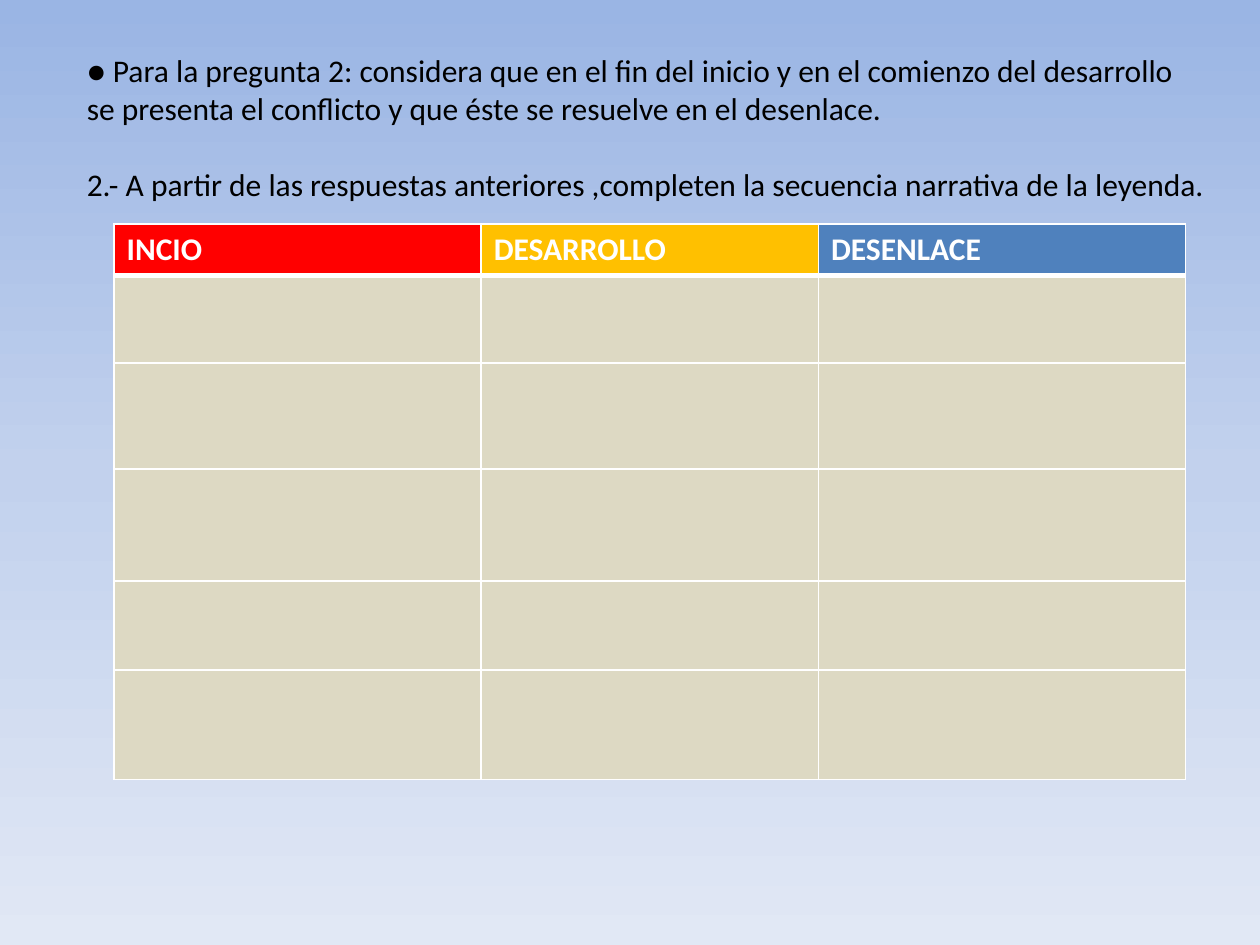
from copy import deepcopy
from dataclasses import dataclass

from lxml.etree import SubElement
from pptx import Presentation
from pptx.dml.color import RGBColor as RGB
from pptx.enum.text import MSO_AUTO_SIZE as AutoSize
from pptx.oxml.ns import qn
from pptx.util import Cm, Pt


@dataclass(frozen=True)
class Theme:
    font: str = "Calibri"
    size: int = 18
    text: str = "000000"
    light: str = "FFFFFF"
    body_fill: str = "DDD9C3"
    sky: tuple = ((0, "9AB5E4"), (0.5, "C2D1ED"), (1, "E1E8F5"))
    stages: tuple = (("INCIO", "FF0000"), ("DESARROLLO", "FFC000"), ("DESENLACE", "4F81BD"))


theme = Theme()


def style_font(paragraph, color, bold=False):
    paragraph.font.name = theme.font
    paragraph.font.size = Pt(theme.size)
    paragraph.font.bold = bold
    paragraph.font.color.rgb = RGB.from_string(color)


def add_border(cell, side, points):
    properties = cell._tc.get_or_add_tcPr()
    line = SubElement(properties, qn(f"a:ln{side}"), w=str(Pt(points)))
    solid = SubElement(line, qn("a:solidFill"))
    SubElement(solid, qn("a:srgbClr"), val=theme.light)


deck = Presentation()
deck.slide_width, deck.slide_height = Cm(25.4), Cm(19.05)
slide = deck.slides.add_slide(deck.slide_layouts[6])

sky = slide.background.fill
sky.gradient()
sky.gradient_angle = 270
first_stop = next(slide.element.iter(qn("a:gs")))
first_stop.addnext(deepcopy(first_stop))
for stop, (position, color) in zip(sky.gradient_stops, theme.sky):
    stop.position = position
    stop.color.rgb = RGB.from_string(color)

instructions = slide.shapes.add_textbox(Cm(1.5), Cm(0.91), Cm(23.6), Cm(5.64)).text_frame
instructions.word_wrap = True
instructions.auto_size = AutoSize.SHAPE_TO_FIT_TEXT
instructions.text = "\n".join((
    "● Para la pregunta 2: considera que en el fin del inicio y en el comienzo del desarrollo",
    "se presenta el conflicto y que éste se resuelve en el desenlace.",
    "2.- A partir de las respuestas anteriores ,completen la secuencia narrativa de la leyenda.",
))
for paragraph in instructions.paragraphs:
    style_font(paragraph, theme.text)
instructions.paragraphs[-1].space_before = Pt(21.6)

column_widths = (7.4, 6.8, 7.4)
row_heights = (1.03, 1.77, 2.13, 2.26, 1.8, 2.2)
sequence = slide.shapes.add_table(
    len(row_heights), len(column_widths),
    Cm(2.3), Cm(4.52), Cm(sum(column_widths)), Cm(sum(row_heights)),
).table
for column, width in zip(sequence.columns, column_widths):
    column.width = Cm(width)

for row_index, (row, height) in enumerate(zip(sequence.rows, row_heights)):
    row.height = Cm(height)
    for cell, (stage, stage_color) in zip(row.cells, theme.stages):
        is_header = row_index == 0
        add_border(cell, "L", 1)
        add_border(cell, "R", 1)
        add_border(cell, "T", 3 if row_index == 1 else 1)
        add_border(cell, "B", 3 if is_header else 1)
        cell.fill.solid()
        cell.fill.fore_color.rgb = RGB.from_string(stage_color if is_header else theme.body_fill)
        if is_header:
            cell.text = stage
            style_font(cell.text_frame.paragraphs[0], theme.light, bold=True)

deck.save("out.pptx")
